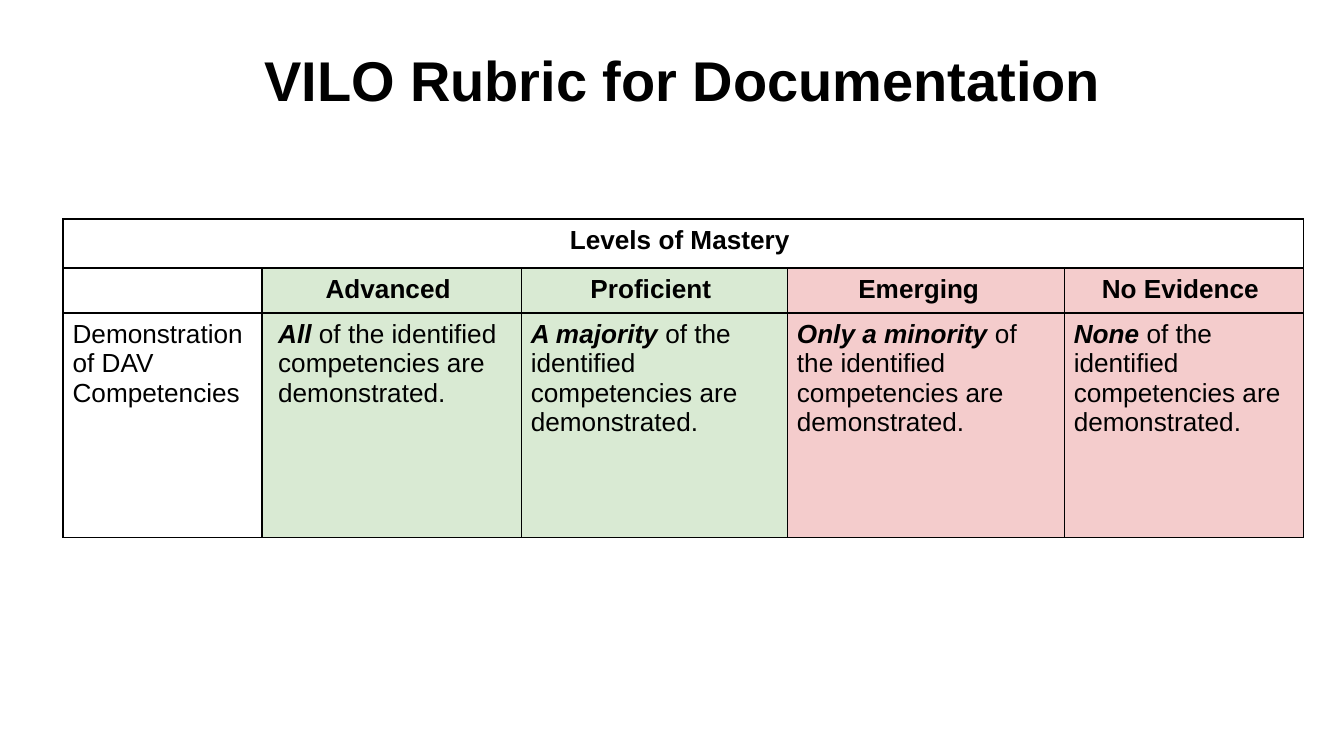
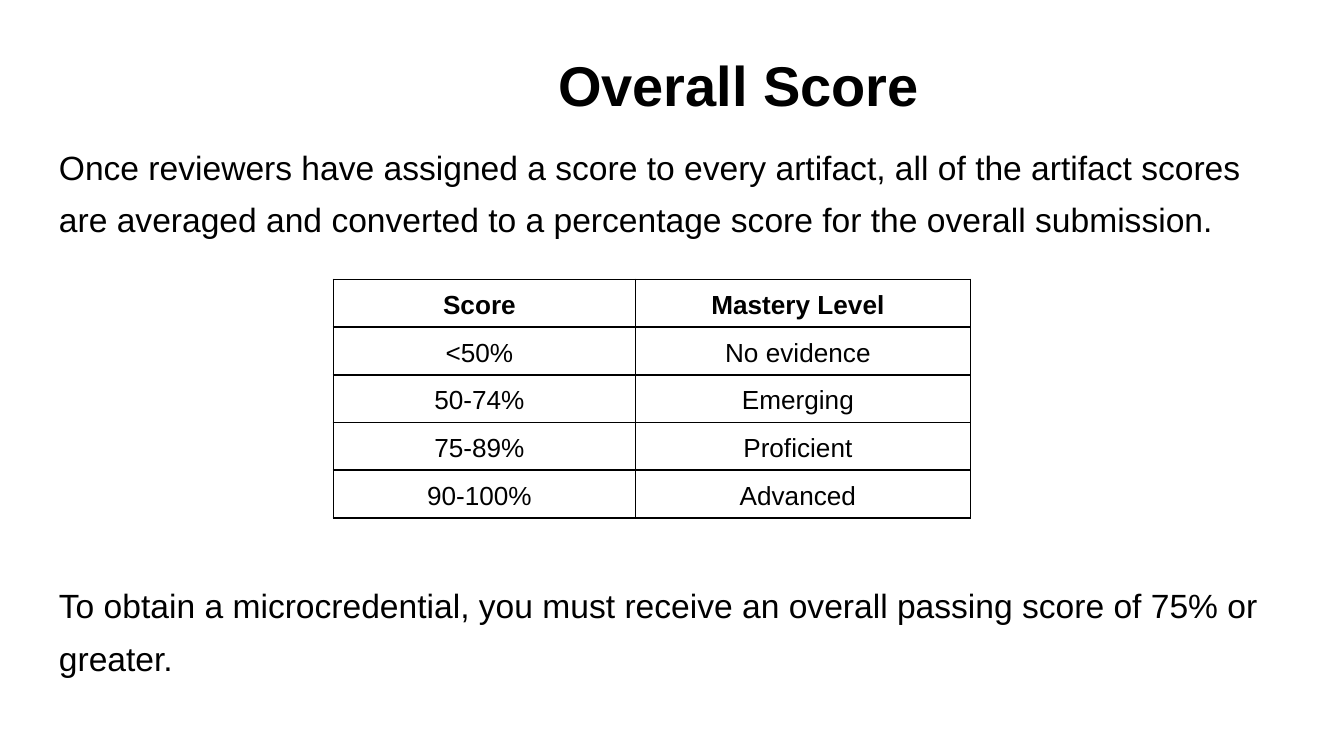
from lxml.etree import SubElement
from pptx import Presentation
from pptx.dml.color import RGBColor
from pptx.enum.text import PP_ALIGN
from pptx.oxml.ns import qn
from pptx.util import Pt

PX = 4572  # 200 px to the inch
BLACK, GREEN, PINK = "000000", "D9EAD3", "F4CCCC"
INK = RGBColor.from_string(BLACK)
MID, LEFT = PP_ALIGN.CENTER, PP_ALIGN.LEFT


def write(par, text, lead="", size=14, bold=False, align=LEFT, space=None, gap=0):
    """Fill a paragraph; the lead words come first, in bold italic."""
    par.alignment = align
    par.space_before = Pt(gap)
    if space:
        par.line_spacing = space
    for words, strong in ((lead, True), (text, False)):
        if words:
            run = par.add_run()
            run.text = words
            font = run.font
            font.name, font.size = "Arial", Pt(size)
            font.bold, font.italic = bold or strong, strong
            font.color.rgb = INK


def grid(slide, rows, left, top, cols, highs, head, fills, inner, **form):
    """Add a ruled table; head counts the bold, centred rows."""
    table = slide.shapes.add_table(len(rows), len(cols), left * PX, top * PX,
                                   sum(cols) * PX, sum(highs) * PX).table
    table.first_row = table.horz_banding = False
    for col, wide in zip(table.columns, cols):
        col.width = wide * PX
    for r, (row, high) in enumerate(zip(rows, highs)):
        table.rows[r].height = high * PX
        for c, item in enumerate(row):
            cell = table.cell(r, c)
            lead, text = item if isinstance(item, tuple) else ("", item)
            cell.margin_left = cell.margin_right = 14 * PX
            cell.margin_top = cell.margin_bottom = (10 if text else 0) * PX
            look = {"align": MID if r < head else LEFT, **form}
            write(cell.text_frame.paragraphs[0], text, lead, bold=r < head, **look)
            if fills[c] and r:
                cell.fill.solid()
                cell.fill.fore_color.rgb = RGBColor.from_string(fills[c])
            else:
                cell.fill.background()
            # Cell borders come before the fill
            prop = cell._tc.get_or_add_tcPr()
            wides = (inner if c else 1, inner if c < len(cols) - 1 else 1, 1, 1)
            for n, (side, wide) in enumerate(zip("LRTB", wides)):
                line = SubElement(prop, qn("a:ln" + side), w=str(Pt(wide)))
                paint = SubElement(line, qn("a:solidFill"))
                SubElement(paint, qn("a:srgbClr"), val=BLACK)
                prop.insert(n, line)
    return table


deck = Presentation()
deck.slide_width, deck.slide_height = 2000 * PX, 1125 * PX

# Slides, with their titles and body text
titles = [("VILO Rubric for Documentation", 84, 48, 20), ("\tOverall Score", 68, 56, 118)]
body = [
    ("Once reviewers have assigned a score to every artifact, all of the artifact "
     "scores are averaged and converted to a percentage score for the overall "
     "submission.", 0),
    ("To obtain a microcredential, you must receive an overall passing score of "
     "75% or greater.", 179),
]
slides = []
for title, left, top, inset in titles:
    slide = deck.slides.add_slide(deck.slide_layouts[6])
    slides.append(slide)
    boxes = [(left, top, 126, inset, [(title, 0)], dict(size=30, bold=True, align=MID))]
    if slide is not slides[0]:
        boxes.append((68, 180, 894, 20, body, dict(size=18, space=1.3)))
    for x, y, high, pad, texts, form in boxes:
        frame = slide.shapes.add_textbox(x * PX, y * PX, 1864 * PX, high * PX).text_frame
        frame.word_wrap = True
        frame.margin_left = pad * PX
        frame.margin_right = frame.margin_top = frame.margin_bottom = 20 * PX
        for n, (text, gap) in enumerate(texts):
            par = frame.add_paragraph() if n else frame.paragraphs[0]
            write(par, text, gap=gap, **form)
rubric, score = slides

# Rubric table
rest = "of the identified competencies are demonstrated."
levels = [
    ["Levels of Mastery ", "", "", "", ""],
    ["", "Advanced ", "Proficient ", "Emerging  ", "No Evidence "],
    ["Demonstration of DAV Competencies"]
    + [(lead + " ", rest) for lead in ("All", "A majority", "Only a minority", "None")],
]
table = grid(rubric, levels, 94, 326, [296, 386, 396, 412, 356], [73, 64, 334],
             2, [None, GREEN, GREEN, PINK, PINK], 0.75)
table.cell(0, 0).merge(table.cell(0, 4))
wide = table.cell(2, 1)
wide.margin_left = wide.margin_right = 24 * PX

# Score table
marks = [
    ["Score", "Mastery Level"],
    ["<50%", "No evidence"],
    ["50-74%", "Emerging"],
    ["75-89%", "Proficient"],
    ["90-100%", "Advanced"],
]
table = grid(score, marks, 496, 416, [450, 498], [71] * 5, 1, [None, None], 1,
             align=MID, space=1.15)
for cell in table.iter_cells():
    cell.margin_right, cell.margin_bottom = 29 * PX, 7 * PX

deck.save("out.pptx")
